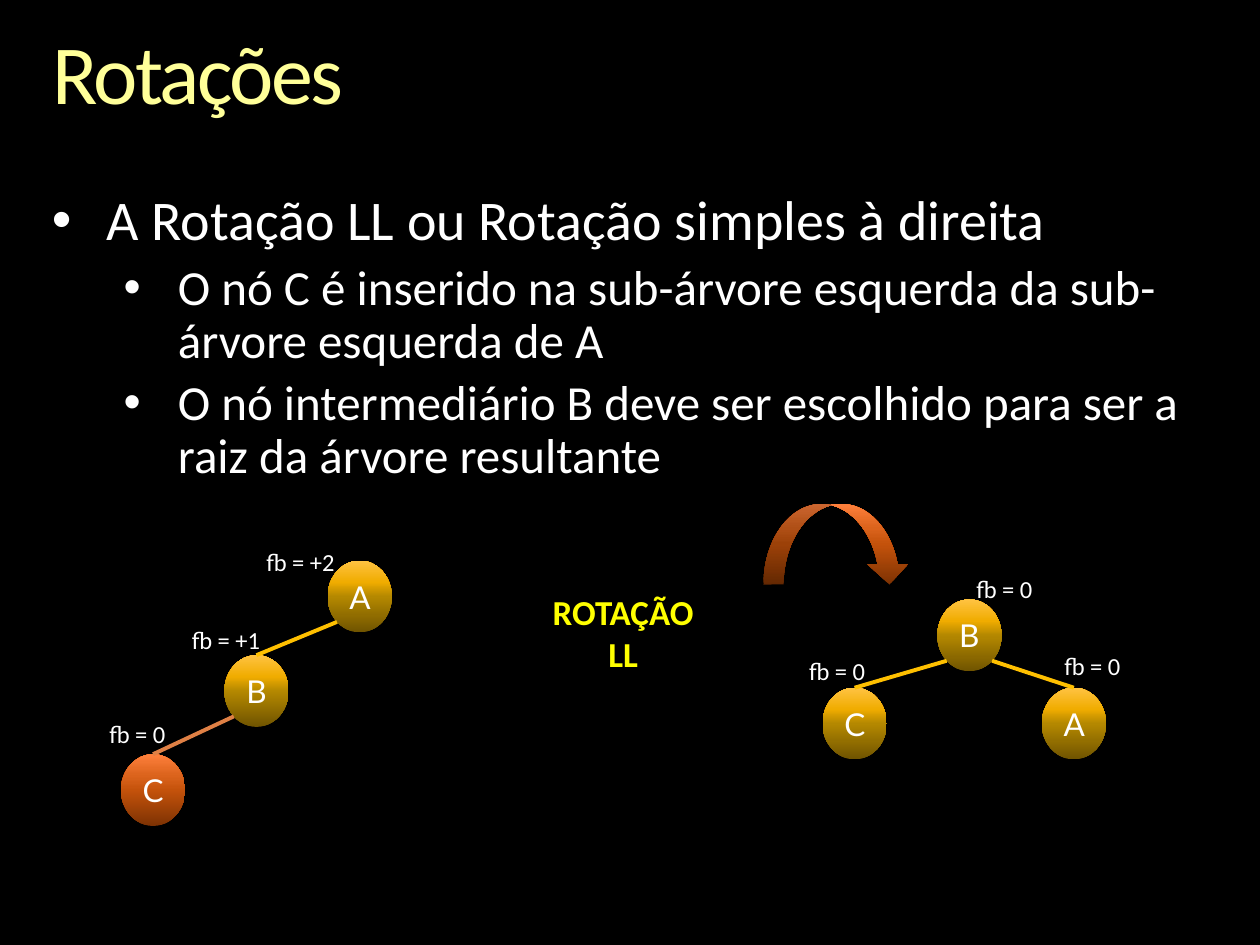
import math
from lxml import etree
from pptx import Presentation, oxml
from pptx import util as u
from pptx.dml.color import RGBColor
from pptx.enum import shapes, text
from pptx.oxml import ns

BLACK = RGBColor(0x00, 0x00, 0x00)
WHITE = RGBColor(0xFF, 0xFF, 0xFF)
CREAM = RGBColor(0xFF, 0xFF, 0x99)
YELLOW = RGBColor(0xFF, 0xFF, 0x00)
GOLD_LINE = RGBColor(0xFF, 0xC0, 0x00)
ORANGE_LINE = RGBColor(0xDF, 0x80, 0x45)
GOLD = [RGBColor.from_string(c) for c in ("705400", "B48800", "F0AC00", "FFC342")]
ORANGE = [RGBColor.from_string(c) for c in ("7D3203", "C4520B", "DB631C", "FF803C")]
STOPS = (0, 50, 70, 100)
NODE_W, NODE_H = 36.7, 41


def paint(shape, colors):
    shape.shadow.inherit = False
    shape.line.fill.background()
    shape.fill.background()
    stops = "".join(f'<a:gs pos="{stop * 1000}"><a:srgbClr val="{color}"/></a:gs>'
                    for stop, color in zip(STOPS, colors))
    gradient = oxml.parse_xml(f'<a:gradFill {ns.nsdecls("a")} rotWithShape="1"><a:gsLst>{stops}</a:gsLst>'
                              '<a:lin ang="16200000" scaled="0"/></a:gradFill>')
    properties = shape.fill._xPr
    properties.replace(properties.find(ns.qn("a:noFill")), gradient)


def write(shape, words, size, color, font="Calibri", bold=False):
    frame = shape.text_frame
    frame.word_wrap = True
    frame.text = words
    para = frame.paragraphs[0]
    para.alignment = text.PP_ALIGN.CENTER
    span = para.runs[0]
    span.font.size = u.Pt(size)
    span.font.name = font
    span.font.bold = bold
    span.font.color.rgb = color


deck = Presentation()
deck.slide_width, deck.slide_height = u.Pt(720), u.Pt(540)
page = deck.slides.add_slide(deck.slide_layouts[1])
page.background.fill.solid()
page.background.fill.fore_color.rgb = BLACK

title = page.shapes.title
body = page.placeholders[1]
for box, (left, top, width, height) in ((title, (30, 18, 660, 52.8)), (body, (29.7, 110, 676, 171))):
    box.left, box.top, box.width, box.height = u.Pt(left), u.Pt(top), u.Pt(width), u.Pt(height)
    frame = box.text_frame
    frame.margin_left = frame.margin_top = frame.margin_right = frame.margin_bottom = 0
    frame.vertical_anchor = text.MSO_ANCHOR.TOP
    frame.auto_size = text.MSO_AUTO_SIZE.NONE
    frame.word_wrap = True

title.text_frame.text = "Rotações"
para = title.text_frame.paragraphs[0]
para.alignment = text.PP_ALIGN.LEFT
para.line_spacing = 0.9
span = para.runs[0]
span.font.size = u.Pt(48)
span.font.name = "Calibri"
span.font.color.rgb = CREAM
span.font._element.set("spc", "-150")

items = [
    (0, "A Rotação LL ou Rotação simples à direita"),
    (1, "O nó C é inserido na sub-árvore esquerda da sub-árvore esquerda de A"),
    (1, "O nó intermediário B deve ser escolhido para ser a raiz da árvore resultante"),
]
body.text_frame.text = "\n".join(words for level, words in items)
for index, (para, (level, words)) in enumerate(zip(body.text_frame.paragraphs, items)):
    size = (32, 28)[level]
    para.level = level
    para.line_spacing = 0.9
    para.space_before = u.Pt(size * 0.2 if index else 0)
    properties = para._p.get_or_add_pPr()
    properties.set("marL", str(u.Pt((31, 72)[level])))
    properties.set("indent", str(u.Pt(-31)))
    etree.SubElement(properties, ns.qn("a:buFont")).set("typeface", "Arial")
    etree.SubElement(properties, ns.qn("a:buChar")).set("char", "•")
    span = para.runs[0]
    span.font.size = u.Pt(size)
    span.font.name = "Calibri"
    span.font.color.rgb = WHITE

unbalanced = {
    "nodes": {"A": (187.2, 320.4, GOLD), "B": (128.2, 374.4, GOLD), "C": (69.1, 431, GOLD and ORANGE)},
    "edges": [("A", "B", GOLD_LINE), ("B", "C", ORANGE_LINE)],
    "labels": [("fb = +2", 136.8, 308.9, 69.8), ("fb = +1", 98.6, 353.5, 61.2), ("fb = 0", 52.6, 407.5, 51.8)],
}
balanced = {
    "nodes": {"C": (470, 393, GOLD), "B": (535.6, 342.6, GOLD), "A": (595.3, 393, GOLD)},
    "edges": [("B", "C", GOLD_LINE), ("B", "A", GOLD_LINE)],
    "labels": [("fb = 0", 443.5, 371.5, 69.8), ("fb = 0", 548, 324.7, 51.8), ("fb = 0", 598.3, 368.6, 51.8)],
}
diagonal = math.sqrt(0.5)
for tree in (unbalanced, balanced):
    group = page.shapes.add_group_shape()
    nodes = tree["nodes"]
    for name, (left, top, colors) in nodes.items():
        node = group.shapes.add_shape(shapes.MSO_SHAPE.OVAL, u.Pt(left), u.Pt(top), u.Pt(NODE_W), u.Pt(NODE_H))
        paint(node, colors)
        node.text_frame.vertical_anchor = text.MSO_ANCHOR.MIDDLE
        write(node, name, 18, WHITE, "Lato")
    for parent, child, color in tree["edges"]:
        parent_left, parent_top = nodes[parent][:2]
        child_left, child_top = nodes[child][:2]
        side = math.copysign(diagonal, child_left - parent_left)
        edge = group.shapes.add_connector(
            shapes.MSO_CONNECTOR.STRAIGHT,
            u.Pt(parent_left + NODE_W / 2 * (1 + side)), u.Pt(parent_top + NODE_H / 2 * (1 + diagonal)),
            u.Pt(child_left + NODE_W / 2), u.Pt(child_top))
        edge.line.color.rgb = color
        edge.line.width = u.Pt(2.25)
        etree.SubElement(edge._element.spPr, ns.qn("a:effectLst"))
    for words, left, top, width in tree["labels"]:
        label = group.shapes.add_textbox(u.Pt(left), u.Pt(top), u.Pt(width), u.Pt(24.2))
        write(label, words, 14, WHITE)

caption = page.shapes.add_textbox(u.Pt(305.3), u.Pt(334), u.Pt(101.5), u.Pt(55.4))
write(caption, "ROTAÇÃO LL", 20, YELLOW, bold=True)

arrow = page.shapes.add_shape(shapes.MSO_SHAPE.CURVED_DOWN_ARROW, u.Pt(436.3), u.Pt(288), u.Pt(83.5), u.Pt(46))
paint(arrow, ORANGE)

deck.save("out.pptx")
